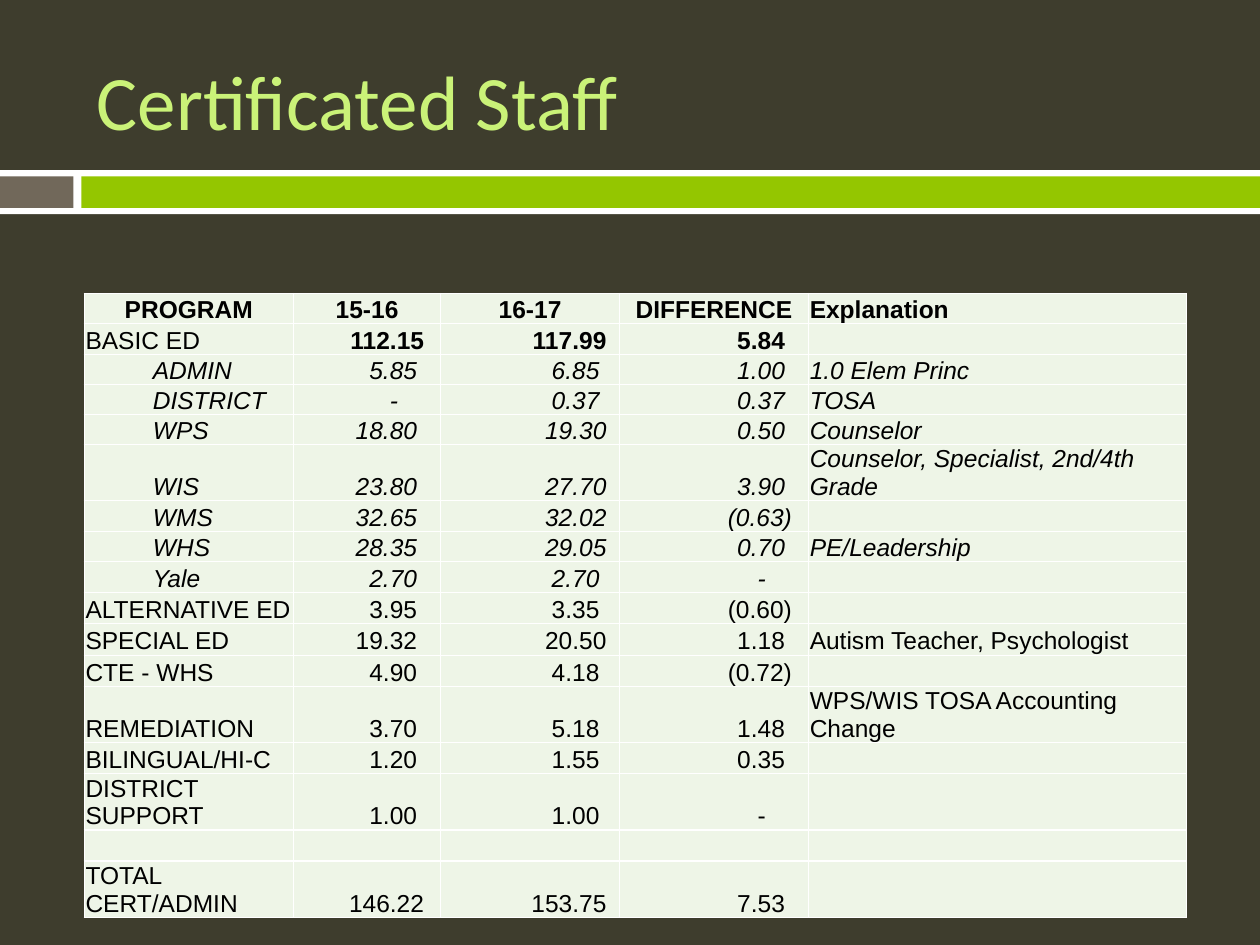
from typing import NamedTuple

from lxml import etree
from pptx import Presentation
from pptx.dml.color import RGBColor
from pptx.enum import shapes, text
from pptx.oxml import ns
from pptx.util import Pt

DARK = RGBColor(0x3E, 0x3D, 0x2D)
WHITE = RGBColor(0xFF, 0xFF, 0xFF)
TAUPE = RGBColor(0x71, 0x68, 0x5A)
GREEN = RGBColor(0x94, 0xC6, 0x00)
LIME = RGBColor(0xCA, 0xF2, 0x78)
PALE = RGBColor(0xEE, 0xF5, 0xE7)
BLACK = RGBColor(0, 0, 0)

SIZE = 14
INSET = 0.7
INDENT = 38.5
LEFT, CENTER, RIGHT = text.PP_ALIGN.LEFT, text.PP_ALIGN.CENTER, text.PP_ALIGN.RIGHT


class Bar(NamedTuple):
    left: float
    top: float
    width: float
    height: float
    color: RGBColor


class Col(NamedTuple):
    head: str
    width: float
    gap: float = INSET  # space right of a number
    wide: int = 0  # numbers longer than this reach further right


class Row(NamedTuple):
    name: str
    old: str = ""
    new: str = ""
    diff: str = ""
    note: str = ""
    sub: bool = False
    bold: bool = False
    height: float = 17.1


BARS = [
    Bar(0, 97.2, 720, 25.2, WHITE),
    Bar(0, 100.8, 42, 18, TAUPE),
    Bar(46.5, 100.8, 673.5, 18, GREEN),
]
COLS = [
    Col("PROGRAM", 119.5),
    Col("15-16", 84.2, 13.5, 5),
    Col("16-17", 102.2, 11.5, 4),
    Col("DIFFERENCE", 108, 13.5, 5),
    Col("Explanation", 216),
]
ROWS = [
    Row("BASIC ED", "112.15", "117.99", "5.84", bold=True),
    Row("ADMIN", "5.85", "6.85", "1.00", "1.0 Elem Princ", sub=True),
    Row("DISTRICT", "-", "0.37", "0.37", "TOSA", sub=True),
    Row("WPS", "18.80", "19.30", "0.50", "Counselor", sub=True),
    Row("WIS", "23.80", "27.70", "3.90", "Counselor, Specialist, 2nd/4th Grade",
        sub=True, height=20),
    Row("WMS", "32.65", "32.02", "(0.63)", sub=True),
    Row("WHS", "28.35", "29.05", "0.70", "PE/Leadership", sub=True),
    Row("Yale", "2.70", "2.70", "-", sub=True),
    Row("ALTERNATIVE ED", "3.95", "3.35", "(0.60)"),
    Row("SPECIAL ED", "19.32", "20.50", "1.18", "Autism Teacher, Psychologist", height=18),
    Row("CTE - WHS", "4.90", "4.18", "(0.72)"),
    Row("REMEDIATION", "3.70", "5.18", "1.48", "WPS/WIS TOSA Accounting Change",
        height=18.7),
    Row("BILINGUAL/HI-C", "1.20", "1.55", "0.35"),
    Row("DISTRICT SUPPORT", "1.00", "1.00", "-"),
    Row(""),
    Row("TOTAL CERT/ADMIN", "146.22", "153.75", "7.53"),
]


def add_bar(slide, bar: Bar) -> None:
    box = slide.shapes.add_shape(
        shapes.MSO_SHAPE.RECTANGLE,
        Pt(bar.left), Pt(bar.top), Pt(bar.width), Pt(bar.height))
    box.shadow.inherit = False
    box.fill.solid()
    box.fill.fore_color.rgb = bar.color
    box.line.fill.background()


def add_run(para, words: str, font: str, size: float, color: RGBColor,
            bold: bool = False, slant: bool = False) -> None:
    run = para.add_run()
    run.text = words
    run.font.name, run.font.size = font, Pt(size)
    run.font.bold, run.font.italic = bold, slant
    run.font.color.rgb = color


def add_edges(cell) -> None:
    props = cell._tc.get_or_add_tcPr()
    for spot, side in enumerate(("lnL", "lnR", "lnT", "lnB")):
        line = etree.Element(ns.qn(f"a:{side}"), w=str(Pt(1)))
        fill = etree.SubElement(line, ns.qn("a:solidFill"))
        etree.SubElement(fill, ns.qn("a:srgbClr"), val=str(WHITE))
        props.insert(spot, line)


def fill_cell(cell, words: str, align, gap: float = INSET, indent: float = 0,
              bold: bool = False, slant: bool = False) -> None:
    cell.fill.solid()
    cell.fill.fore_color.rgb = PALE
    add_edges(cell)
    cell.vertical_anchor = text.MSO_ANCHOR.BOTTOM
    cell.margin_left, cell.margin_right = Pt(INSET + indent), Pt(gap)
    cell.margin_top, cell.margin_bottom = Pt(INSET), 0
    para = cell.text_frame.paragraphs[0]
    para.alignment = align
    if words:
        add_run(para, words, "Arial", SIZE, BLACK, bold, slant)
    else:  # keeps an empty row as low as the others
        etree.SubElement(para._p, ns.qn("a:endParaRPr"), sz=str(SIZE * 100))


def num_gap(col: Col, words: str) -> float:
    if words == "-":
        return col.gap + 11
    return col.gap - 4 if len(words) > col.wide else col.gap


def add_grid(slide) -> None:
    width = sum(col.width for col in COLS)
    height = 17.1 + sum(row.height for row in ROWS)
    grid = slide.shapes.add_table(
        len(ROWS) + 1, len(COLS), Pt(48.2), Pt(167.8), Pt(width), Pt(height)).table
    grid.first_row = grid.horz_banding = False

    # Header
    grid.rows[0].height = Pt(17.1)
    for c, col in enumerate(COLS):
        grid.columns[c].width = Pt(col.width)
        align = LEFT if c == len(COLS) - 1 else CENTER
        fill_cell(grid.cell(0, c), col.head, align, bold=True)

    # Programs
    for r, row in enumerate(ROWS, 1):
        grid.rows[r].height = Pt(row.height)
        fill_cell(grid.cell(r, 0), row.name, LEFT,
                  indent=INDENT if row.sub else 0, slant=row.sub)
        for c, words in enumerate((row.old, row.new, row.diff), 1):
            fill_cell(grid.cell(r, c), words, RIGHT, num_gap(COLS[c], words),
                      bold=row.bold, slant=row.sub)
        fill_cell(grid.cell(r, 4), row.note, LEFT, slant=row.sub)


def main() -> None:
    deck = Presentation()
    deck.slide_width, deck.slide_height = Pt(720), Pt(540)
    slide = deck.slides.add_slide(deck.slide_layouts[5])
    slide.background.fill.solid()
    slide.background.fill.fore_color.rgb = DARK

    # Band below the title
    for bar in BARS:
        add_bar(slide, bar)

    # Title
    title = slide.shapes.title
    title.left, title.top = Pt(48.2), Pt(18)
    title.width, title.height = Pt(642.2), Pt(77.8)
    frame = title.text_frame
    frame.auto_size = text.MSO_AUTO_SIZE.NONE
    frame.vertical_anchor = text.MSO_ANCHOR.MIDDLE
    frame.paragraphs[0].alignment = LEFT
    add_run(frame.paragraphs[0], "Certificated Staff", "Calibri", 44, LIME)

    # Staff table
    add_grid(slide)
    deck.save("out.pptx")


if __name__ == "__main__":
    main()
